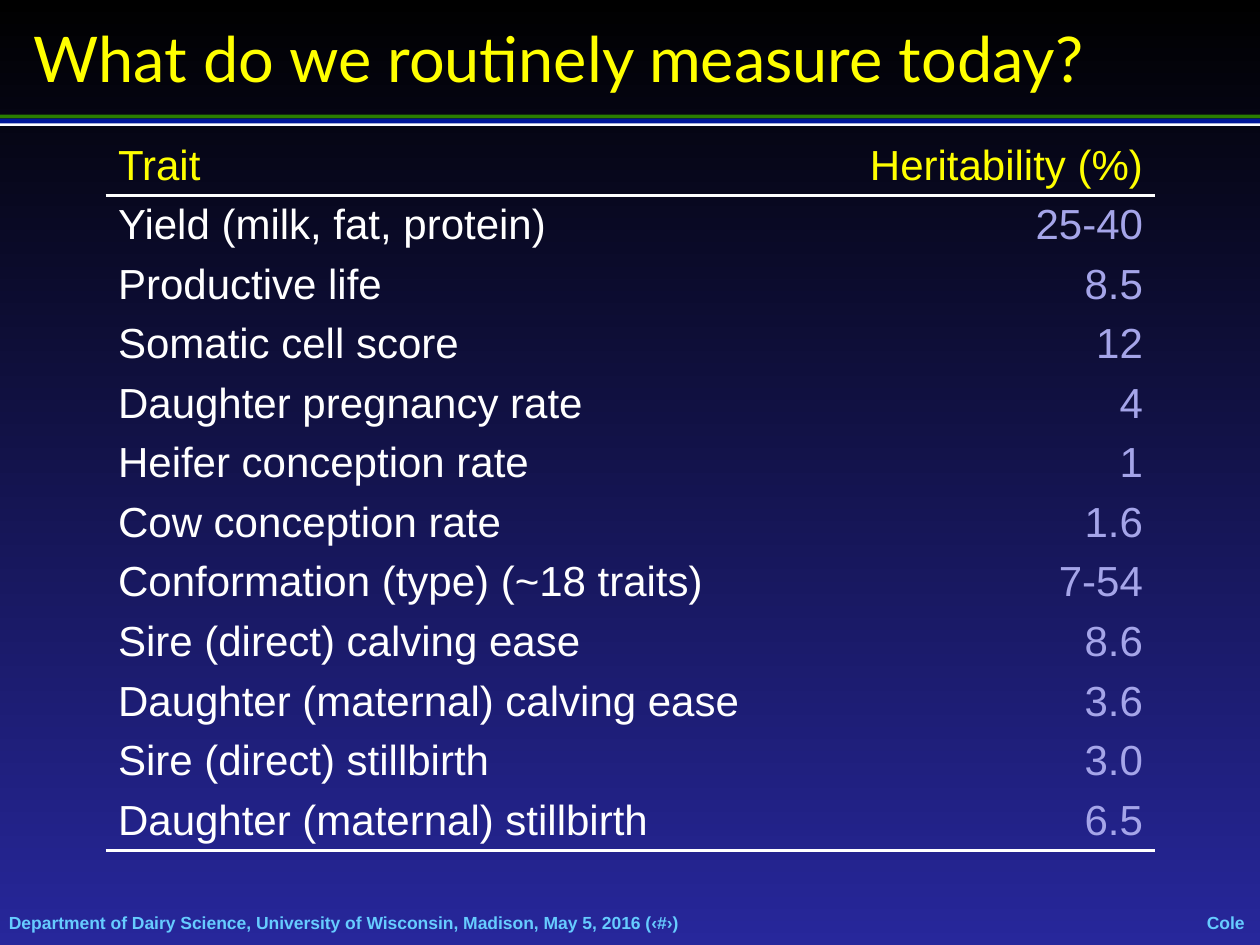
import dataclasses
import typing

import pptx
import pptx.dml.color
import pptx.enum.shapes
import pptx.enum.text
import pptx.oxml
import pptx.oxml.ns
import pptx.util

Cm = pptx.util.Cm
Pt = pptx.util.Pt
Align = pptx.enum.text.PP_ALIGN
Anchor = pptx.enum.text.MSO_ANCHOR


@dataclasses.dataclass(frozen=True)
class Theme:
    background_top: str = "000000"
    background_bottom: str = "27279B"
    heading: str = "FFFF00"
    body: str = "FFFFFF"
    value: str = "A5A5E9"
    footer: str = "66CCFF"
    green: str = "2A7E00"
    blue: str = "001799"
    title_font: str = "Lato"
    body_font: str = "Arial"
    title_size: int = 36
    table_size: int = 24
    footer_size: int = 10
    border_width: float = 2.25
    plain_table_style: str = "{2D5ABB26-0587-4C30-8999-92F81FD0307C}"


THEME = Theme()


class Box(typing.NamedTuple):
    left: float
    top: float
    width: float
    height: float

    def lengths(self) -> list[pptx.util.Length]:
        return [Cm(value) for value in self]


class Label(typing.NamedTuple):
    text: str
    box: Box
    font: str
    size: int
    color: str
    bold: bool = False
    wrap: bool = True
    alignment: Align = Align.LEFT
    inset: tuple[float, float] = (0, 0)


class Bar(typing.NamedTuple):
    top: float
    height: float
    color: str


class Trait(typing.NamedTuple):
    name: str
    heritability: str


SLIDE_WIDTH, SLIDE_HEIGHT = 25.4, 19.05
TABLE_LEFT, TABLE_TOP = 2.13, 2.74
COLUMN_WIDTHS = (13.67, 7.49)
ROW_HEIGHT = 1.2
BORDER_SIDES = ("lnL", "lnR", "lnT", "lnB")

BARS = [
    Bar(2.31, 0.08, THEME.green),
    Bar(2.46, 0.08, THEME.body),
    Bar(2.39, 0.1, THEME.blue),
]

LABELS = [
    Label("Department of Dairy Science, University of Wisconsin, Madison, May 5, 2016 (‹#›)",
          Box(0.18, 18.39, 20.55, 0.43), THEME.body_font, THEME.footer_size,
          THEME.footer, bold=True),
    Label("Cole", Box(24.11, 18.39, 1.2, 0.43), THEME.body_font, THEME.footer_size,
          THEME.footer, bold=True, wrap=False, alignment=Align.CENTER),
    Label("What do we routinely measure today?", Box(0.43, 0.26, 24.54, 1.78),
          THEME.title_font, THEME.title_size, THEME.heading, inset=(0.25, 0.13)),
]

TRAITS = [
    Trait("Trait", "Heritability (%)"),
    Trait("Yield (milk, fat, protein)", "25-40"),
    Trait("Productive life", "8.5"),
    Trait("Somatic cell score", "12"),
    Trait("Daughter pregnancy rate", "4"),
    Trait("Heifer conception rate", "1"),
    Trait("Cow conception rate", "1.6"),
    Trait("Conformation (type) (~18 traits)", "7-54"),
    Trait("Sire (direct) calving ease", "8.6"),
    Trait("Daughter (maternal) calving ease", "3.6"),
    Trait("Sire (direct) stillbirth", "3.0"),
    Trait("Daughter (maternal) stillbirth", "6.5"),
]


def set_attributes(target: typing.Any, values: dict[str, typing.Any]) -> None:
    for name, value in values.items():
        setattr(target, name, value)


def rgb(color: str) -> pptx.dml.color.RGBColor:
    return pptx.dml.color.RGBColor.from_string(color)


def write_text(paragraph, text: str, font: str, size: int, color: str,
               bold: bool, alignment: Align) -> None:
    paragraph.alignment = alignment
    run = paragraph.add_run()
    run.text = text
    set_attributes(run.font, {"name": font, "size": Pt(size), "bold": bold})
    run.font.color.rgb = rgb(color)


def paint_background(slide) -> None:
    fill = slide.background.fill
    fill.gradient()
    fill.gradient_angle = 270
    colors = (THEME.background_top, THEME.background_bottom)
    for position, (stop, color) in enumerate(zip(fill.gradient_stops, colors)):
        stop.position = position
        stop.color.rgb = rgb(color)


def draw_bar(slide, bar: Bar) -> None:
    shape = slide.shapes.add_shape(
        pptx.enum.shapes.MSO_SHAPE.RECTANGLE,
        *Box(0, bar.top, SLIDE_WIDTH, bar.height).lengths())
    shape.shadow.inherit = False
    shape.fill.solid()
    shape.fill.fore_color.rgb = rgb(bar.color)
    shape.line.fill.background()


def draw_label(slide, label: Label) -> None:
    frame = slide.shapes.add_textbox(*label.box.lengths()).text_frame
    horizontal, vertical = (Cm(value) for value in label.inset)
    set_attributes(frame, {
        "word_wrap": label.wrap, "vertical_anchor": Anchor.MIDDLE,
        "margin_left": horizontal, "margin_right": horizontal,
        "margin_top": vertical, "margin_bottom": vertical,
    })
    write_text(frame.paragraphs[0], label.text, label.font, label.size,
               label.color, label.bold, label.alignment)


def set_borders(cell, ruled_side: str | None) -> None:
    ruled = f'<a:solidFill><a:srgbClr val="{THEME.body}"/></a:solidFill>'
    for side in BORDER_SIDES:
        fill, width = (ruled, Pt(THEME.border_width)) if side == ruled_side else ("<a:noFill/>", 0)
        cell._tc.get_or_add_tcPr().append(pptx.oxml.parse_xml(
            f'<a:{side} {pptx.oxml.ns.nsdecls("a")} w="{width}">{fill}</a:{side}>'))


def draw_trait_table(slide, traits: list[Trait]) -> None:
    box = Box(TABLE_LEFT, TABLE_TOP, sum(COLUMN_WIDTHS), ROW_HEIGHT * len(traits))
    table = slide.shapes.add_table(len(traits), len(COLUMN_WIDTHS), *box.lengths()).table
    set_attributes(table, {"first_row": False, "horz_banding": False})
    style = table._tbl.tblPr.find(pptx.oxml.ns.qn("a:tableStyleId"))
    style.text = THEME.plain_table_style
    for column, width in zip(table.columns, COLUMN_WIDTHS):
        column.width = Cm(width)

    ruled_sides = {0: "lnB", 1: "lnT", len(traits) - 1: "lnB"}
    column_formats = ((THEME.body, Align.LEFT), (THEME.value, Align.RIGHT))
    for row_index, trait in enumerate(traits):
        table.rows[row_index].height = Cm(ROW_HEIGHT)
        for column_index, (text, (color, alignment)) in enumerate(zip(trait, column_formats)):
            cell = table.cell(row_index, column_index)
            set_attributes(cell, {
                "margin_left": Cm(0.25), "margin_right": Cm(0.25),
                "margin_top": Cm(0.06), "margin_bottom": Cm(0.06),
                "vertical_anchor": Anchor.MIDDLE,
            })
            set_borders(cell, ruled_sides.get(row_index))
            cell.fill.background()
            write_text(cell.text_frame.paragraphs[0], text, THEME.body_font, THEME.table_size,
                       color if row_index else THEME.heading, False, alignment)


def main() -> None:
    presentation = pptx.Presentation()
    set_attributes(presentation, {"slide_width": Cm(SLIDE_WIDTH),
                                  "slide_height": Cm(SLIDE_HEIGHT)})
    slide = presentation.slides.add_slide(presentation.slide_layouts[6])
    paint_background(slide)
    for bar in BARS:
        draw_bar(slide, bar)
    for label in LABELS:
        draw_label(slide, label)
    draw_trait_table(slide, TRAITS)
    presentation.save("out.pptx")


if __name__ == "__main__":
    main()
